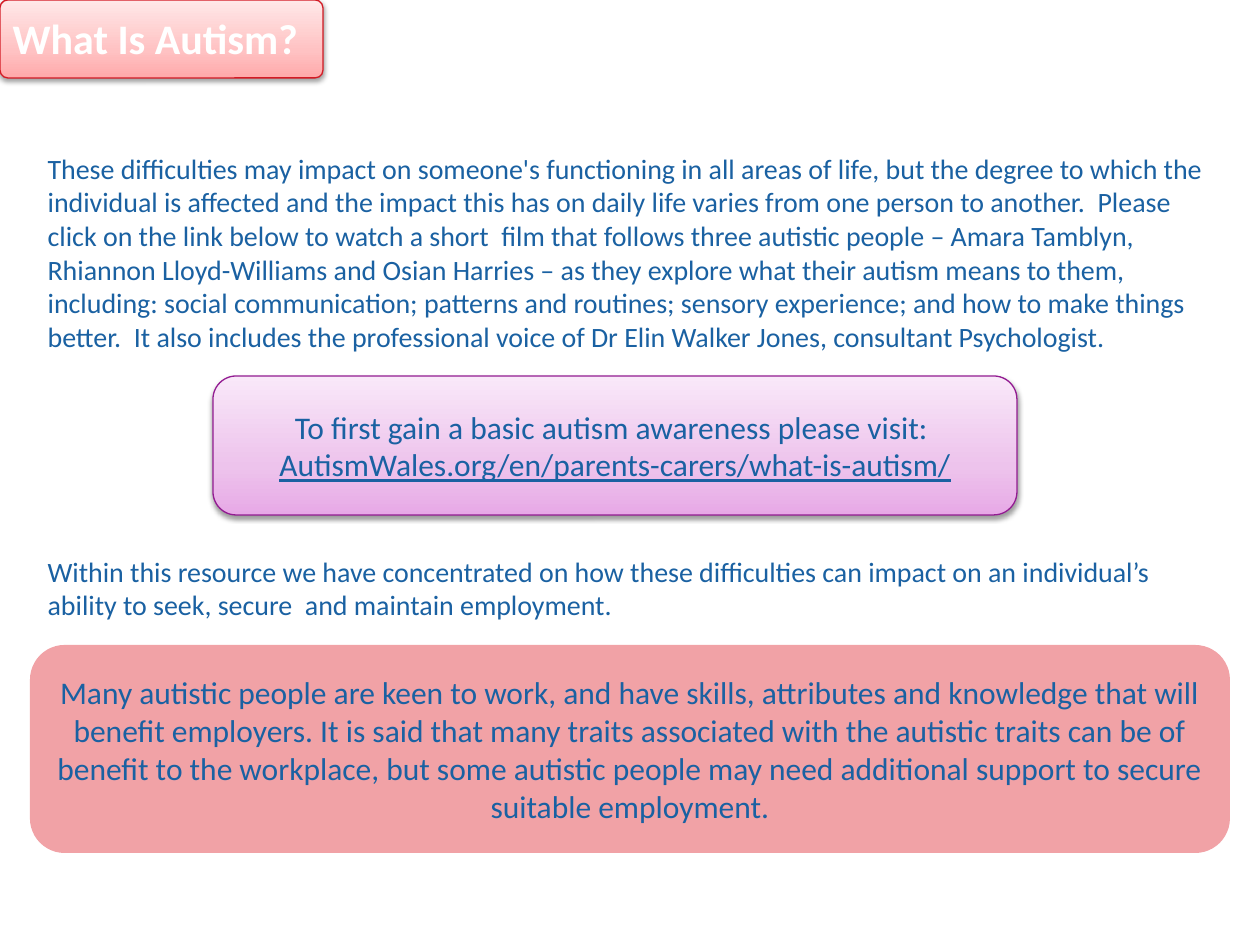
from copy import deepcopy
from dataclasses import dataclass

from lxml.etree import SubElement
from pptx import Presentation
from pptx.dml.color import RGBColor as Rgb
from pptx.enum.shapes import MSO_SHAPE as Shape
from pptx.enum.text import MSO_ANCHOR as Anchor, MSO_AUTO_SIZE as AutoSize, PP_ALIGN as Align
from pptx.oxml.ns import qn
from pptx.util import Emu, Pt

PX = 914400 / 126


@dataclass(frozen=True)
class Theme:
    """Colours and type sizes of the slide."""
    font: str = "Calibri"
    title_size: int = 24
    body_size: int = 16
    panel_size: int = 18
    ink: str = "1A61A2"
    title_ink: str = "FFFFFF"
    panel: str = "F1A2A6"
    red_line: str = "D31A24"
    red_stops: tuple = ("FFA9AA", "FFC2C3", "FFE8E8")
    purple_line: str = "931C92"
    purple_stops: tuple = ("E7A9E6", "EDC3EC", "F9E8F9")
    stop_positions: tuple = (0, 0.35, 1)


THEME = Theme()
IMPACT = (
    "These difficulties may impact on someone's\u00a0functioning in all areas of life, but the degree "
    "to which the individual is affected and the impact this has on daily life varies from one person "
    "to another.\u00a0 Please click on the link below to watch a short\u00a0 film that follows three "
    "autistic people – Amara Tamblyn, Rhiannon Lloyd-Williams and Osian Harries – as they explore what "
    "their autism means to them, including: social communication; patterns and routines; sensory "
    "experience; and how to make things better.\u00a0 It also includes the professional voice of "
    "Dr Elin Walker Jones, consultant Psychologist."
)
FOCUS = (
    "Within this resource we have concentrated on how these\u00a0difficulties can impact on an "
    "individual’s ability to seek, secure\u00a0 and maintain\u00a0employment."
)
VISIT = ("To first gain a basic autism awareness please visit: ",
         "AutismWales.org/en/parents-carers/what-is-autism/")
EMPLOYMENT = (
    "Many autistic people are keen to work, and have skills, attributes and knowledge that will "
    "benefit employers. It is said that many traits associated with the autistic traits can be of "
    "benefit to the workplace, but some autistic people may need additional support to secure "
    "suitable employment."
)


def emu(*lengths):
    """Turn px lengths into EMU."""
    return [Emu(round(length * PX)) for length in lengths]


def place(placeholder, box):
    """Move a placeholder to a box."""
    placeholder.left, placeholder.top, placeholder.width, placeholder.height = emu(*box)


def write(frame, paragraphs, size, color, align, anchor, bold=False):
    """Fill a text frame with evenly formatted paragraphs."""
    frame.text = "\n".join(paragraphs)
    frame.word_wrap = True
    frame.auto_size = AutoSize.NONE
    frame.vertical_anchor = anchor
    for paragraph in frame.paragraphs:
        paragraph.alignment = align
        paragraph.line_spacing = 1.0
        paragraph.space_before = Pt(0)
        for run in paragraph.runs:
            run.font.name = THEME.font
            run.font.size = Pt(size)
            run.font.bold = bold
            run.font.color.rgb = Rgb.from_string(color)


def add_panel(slide, box):
    """Add a rounded panel without line or shadow."""
    panel = slide.shapes.add_shape(Shape.ROUNDED_RECTANGLE, *emu(*box))
    panel.shadow.inherit = False
    panel.line.fill.background()
    return panel


def add_glossy_panel(slide, box, stops, line):
    """Add a rounded panel with gradient, outline and soft shadow."""
    panel = add_panel(slide, box)
    panel.fill.gradient()
    panel.fill.gradient_angle = 90
    stop_list = panel.element.spPr.find(".//" + qn("a:gsLst"))
    stop_list.insert(1, deepcopy(stop_list[0]))
    for stop, color, position in zip(panel.fill.gradient_stops, stops, THEME.stop_positions):
        stop.color.rgb = Rgb.from_string(color)
        stop.position = position
    panel.line.color.rgb = Rgb.from_string(line)
    panel.line.width = Pt(0.75)
    effects = panel.element.spPr.find(qn("a:effectLst"))
    shadow = SubElement(effects, qn("a:outerShdw"), blurRad=str(Pt(3.1)), dist=str(Pt(1.6)),
                        dir="5400000", rotWithShape="0")
    shade = SubElement(shadow, qn("a:srgbClr"), val="000000")
    SubElement(shade, qn("a:alpha"), val="38000")
    return panel


def build_heading(slide, box):
    """Place the title on its red banner."""
    left, top, width, height = box
    banner = add_glossy_panel(slide, box, THEME.red_stops, THEME.red_line)
    banner.adjustments[0] = 0.1
    title = slide.shapes.title
    title.element.addprevious(banner.element)
    place(title, (left, top + 6, width, height - 6))
    write(title.text_frame, ["What Is Autism?"], THEME.title_size, THEME.title_ink,
          Align.LEFT, Anchor.TOP, bold=True)


def build_body(slide, box):
    """Place the two explanatory paragraphs, with room for the link between them."""
    body = slide.placeholders[1]
    place(body, box)
    write(body.text_frame, [IMPACT, FOCUS], THEME.body_size, THEME.ink, Align.LEFT, Anchor.TOP)
    for paragraph in body.text_frame.paragraphs:
        properties = paragraph._p.get_or_add_pPr()
        properties.set("marL", "0")
        properties.set("indent", "0")
        SubElement(properties, qn("a:buNone"))
    body.text_frame.paragraphs[1].space_before = Pt(115)


def build_employment(slide, box):
    """Place the closing statement on employment."""
    panel = add_panel(slide, box)
    panel.fill.solid()
    panel.fill.fore_color.rgb = Rgb.from_string(THEME.panel)
    write(panel.text_frame, [EMPLOYMENT], THEME.panel_size, THEME.ink, Align.CENTER, Anchor.MIDDLE)


def build_visit(slide, box):
    """Place the purple panel with the web address."""
    panel = add_glossy_panel(slide, box, THEME.purple_stops, THEME.purple_line)
    write(panel.text_frame, VISIT, THEME.panel_size, THEME.ink, Align.CENTER, Anchor.MIDDLE)
    panel.text_frame.paragraphs[1].runs[0].font.underline = True


def main():
    """Build and save the slide."""
    deck = Presentation()
    deck.slide_width, deck.slide_height = emu(1260, 945)
    slide = deck.slides.add_slide(deck.slide_layouts[1])
    build_heading(slide, (0, 0, 323, 78))
    build_body(slide, (35, 145, 1200, 832))
    build_employment(slide, (30, 645, 1200, 208))
    build_visit(slide, (213, 376, 804, 139))
    deck.save("out.pptx")


if __name__ == "__main__":
    main()
